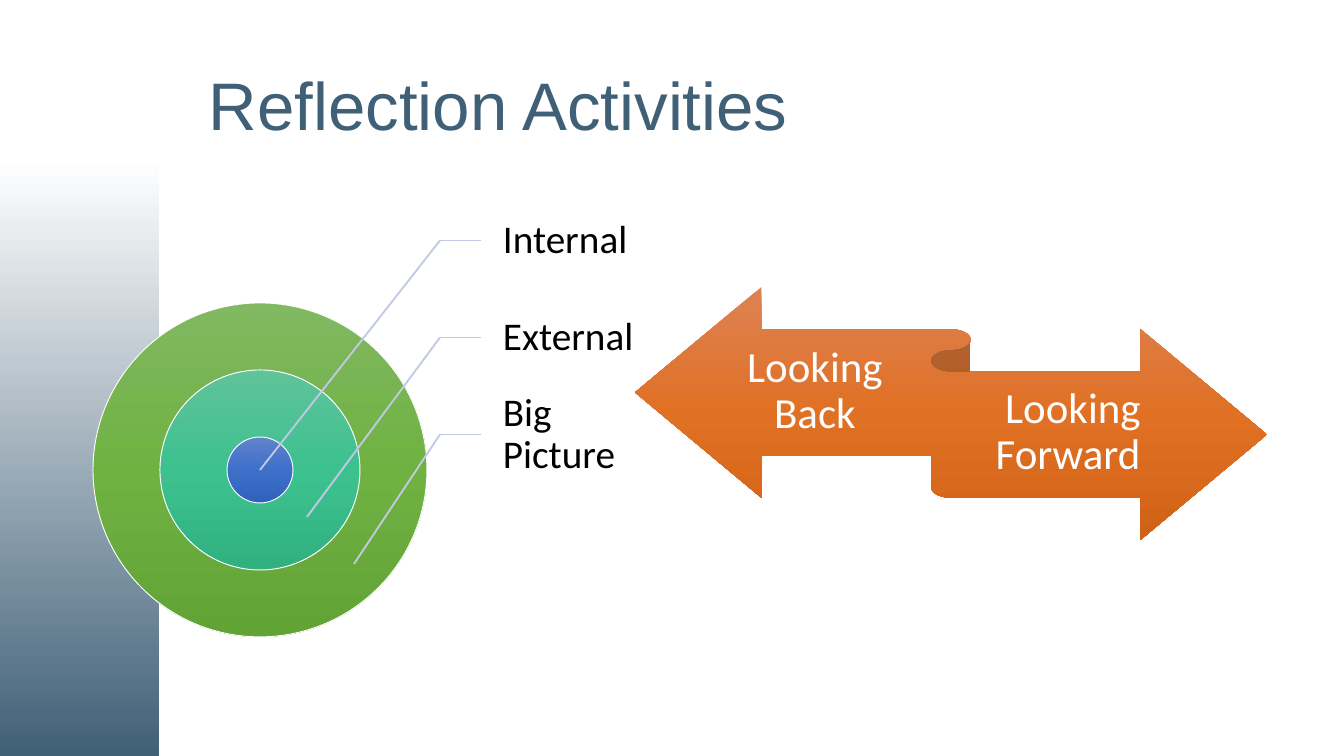
"""Build the Reflection Activities slide: ringed target with callouts and a two-way ribbon."""
from pptx import Presentation
from pptx.dml.color import RGBColor
from pptx.enum.shapes import MSO_CONNECTOR as Connector, MSO_SHAPE as Shape
from pptx.enum.text import MSO_ANCHOR as Anchor, PP_ALIGN as Align
from pptx.oxml import parse_xml
from pptx.oxml.ns import nsdecls, qn
from pptx.util import Pt

EMU_PER_PX = 914400 / 134.4
WIDTH, HEIGHT = 1344, 756

TITLE = "Reflection Activities"
SLATE, WHITE, BLACK, CALLOUT = "406077", "FFFFFF", "000000", "C1C9E4"
SIDEBAR_STOPS = [(0, SLATE), (79, WHITE)]
RIBBON_STOPS = [(0, "DD8254"), (50, "E07024"), (100, "D06216")]
RIBBON_TEXTS = [
    ("Looking Back", (711, 330, 208, 124)),
    ("Looking Forward ", (950, 371, 246, 124)),
]
RINGS = [
    (167, [(0, "81B861"), (50, "6FB242"), (100, "62A336")]),
    (100, [(0, "60C39A"), (50, "3DC18F"), (100, "31B080")]),
    (33, [(0, "6183CB"), (50, "3E70CA"), (100, "3062BB")]),
]
LABELS = ["Internal", "External", "Big Picture"]

CENTER_X, CENTER_Y = 260, 470
TARGET_STEP = 47
LABEL_LEFT, LABEL_TOP, LABEL_WIDTH, LABEL_PITCH = 481, 192, 167, 97
ELBOW_X = 440


def px(*lengths):
    return [round(length * EMU_PER_PX) for length in lengths]


def color(hex_string):
    return RGBColor.from_string(hex_string)


def add_gradient_shape(slide, preset, box, stops, angle=90, outline=None):
    shape = slide.shapes.add_shape(preset, *px(*box))
    shape.shadow.inherit = False
    shape.fill.gradient()
    stop_xml = "".join(
        f'<a:gs pos="{position * 1000}"><a:srgbClr val="{tone}"/></a:gs>'
        for position, tone in stops
    )
    gradient = parse_xml(
        f'<a:gradFill {nsdecls("a")} rotWithShape="1"><a:gsLst>{stop_xml}</a:gsLst>'
        f'<a:lin ang="{angle * 60000}" scaled="0"/></a:gradFill>'
    )
    properties = shape.element.spPr
    properties.replace(properties.find(qn("a:gradFill")), gradient)
    if outline:
        shape.line.color.rgb = color(outline)
        shape.line.width = Pt(0.5)
    else:
        shape.line.fill.background()


def add_text(slide, text, box, *, size, tone, font="Calibri",
             align=Align.LEFT, insets=(13, 7, 13, 7)):
    frame = slide.shapes.add_textbox(*px(*box)).text_frame
    frame.word_wrap = True
    frame.vertical_anchor = Anchor.MIDDLE
    (frame.margin_left, frame.margin_top,
     frame.margin_right, frame.margin_bottom) = px(*insets)
    paragraph = frame.paragraphs[0]
    paragraph.alignment = align
    paragraph.line_spacing = 0.9
    run = paragraph.add_run()
    run.text = text
    run.font.name = font
    run.font.size = Pt(size)
    run.font.color.rgb = color(tone)


def add_line(slide, start, end):
    line = slide.shapes.add_connector(Connector.STRAIGHT, *px(*start, *end))
    line.line.color.rgb = color(CALLOUT)
    line.line.width = Pt(1)
    line.element.spPr.append(parse_xml(f'<a:effectLst {nsdecls("a")}/>'))


def main():
    deck = Presentation()
    deck.slide_width, deck.slide_height = px(WIDTH, HEIGHT)
    slide = deck.slides.add_slide(deck.slide_layouts[6])

    add_gradient_shape(slide, Shape.RECTANGLE, (0, 0, 159, HEIGHT), SIDEBAR_STOPS, angle=270)
    add_text(slide, TITLE, (196, 40, 972, 138), size=36, tone=SLATE, font="Arial")

    add_gradient_shape(slide, Shape.LEFT_RIGHT_RIBBON, (635, 287, 632, 253), RIBBON_STOPS)
    for text, box in RIBBON_TEXTS:
        add_text(slide, text, box, size=23, tone=WHITE, align=Align.CENTER,
                 insets=(0, 12, 0, 13))

    for radius, stops in RINGS:
        box = (CENTER_X - radius, CENTER_Y - radius, 2 * radius, 2 * radius)
        add_gradient_shape(slide, Shape.OVAL, box, stops, outline=WHITE)

    for index, label in enumerate(LABELS):
        top = LABEL_TOP + index * LABEL_PITCH
        elbow = (ELBOW_X, top + LABEL_PITCH / 2)
        target = (CENTER_X + index * TARGET_STEP, CENTER_Y + index * TARGET_STEP)
        add_text(slide, label, (LABEL_LEFT, top, LABEL_WIDTH, LABEL_PITCH),
                 size=21, tone=BLACK, insets=(22, 4, 4, 4))
        add_line(slide, elbow, (LABEL_LEFT, elbow[1]))
        add_line(slide, elbow, target)

    deck.save("out.pptx")


if __name__ == "__main__":
    main()
